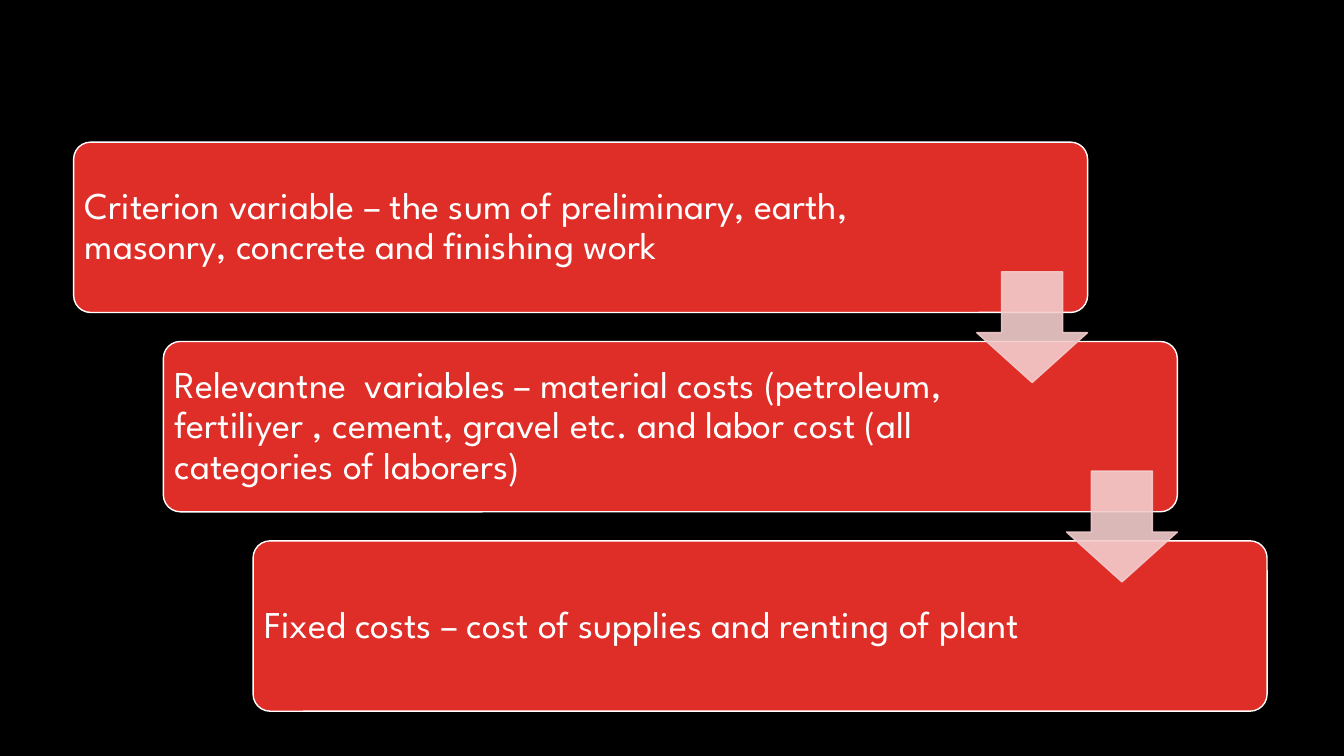
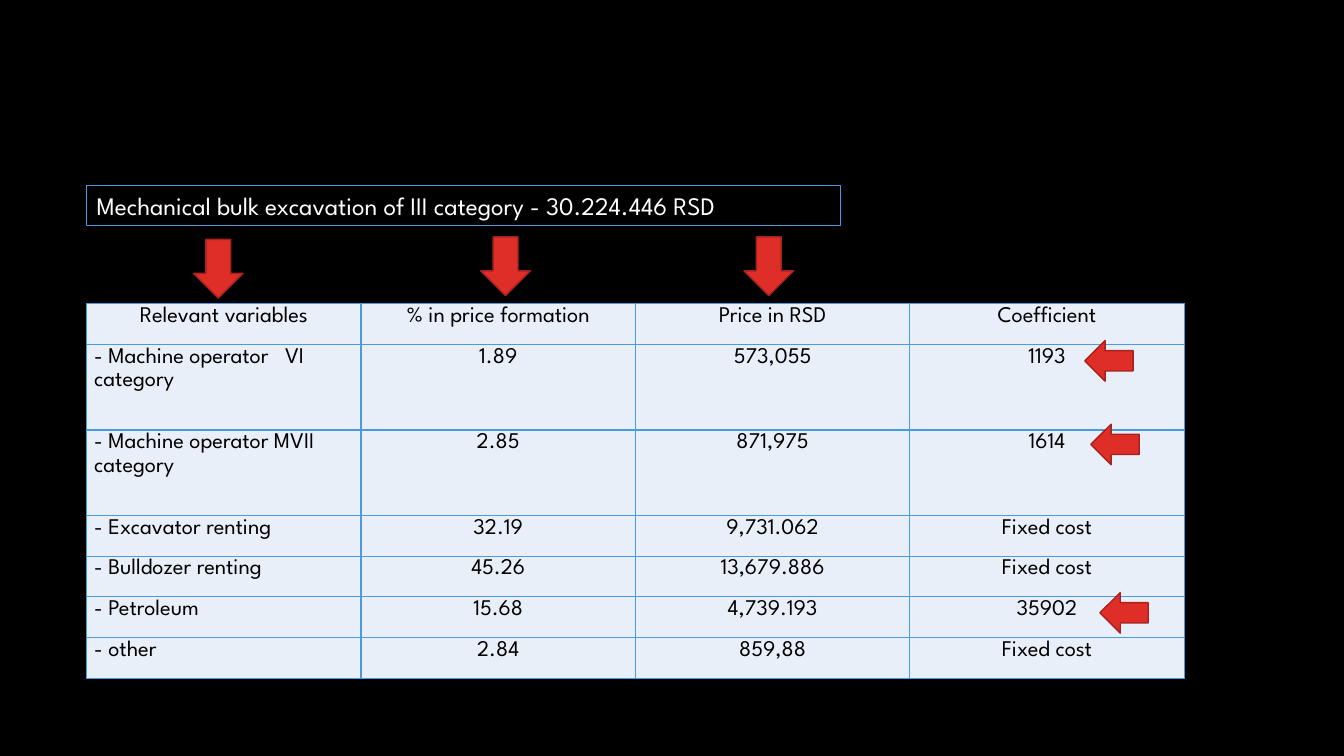
"""Build two slides on cost variables for construction price estimation."""
from lxml import etree
from pptx import Presentation
from pptx import util as u
from pptx.dml.color import RGBColor
from pptx.enum import shapes, text
from pptx.oxml.ns import qn

BLACK = RGBColor(0x00, 0x00, 0x00)
WHITE = RGBColor(0xFF, 0xFF, 0xFF)
RED = RGBColor(0xDF, 0x2E, 0x28)
DARK_RED = RGBColor(0xA5, 0x22, 0x1E)
PINK = RGBColor(0xF3, 0xCD, 0xCD)
BLUE = RGBColor(0x4A, 0x9B, 0xDC)
PALE_BLUE = RGBColor(0xE9, 0xEF, 0xF9)
FONT = "League Spartan"

CARD_LEFT, CARD_TOP = 52.6, 101.5
CARD_WIDTH, CARD_HEIGHT = 724.3, 121.7
CARD_STEP_X, CARD_STEP_Y = 64.1, 142.4
CARD_INSET = 4.4
STEP_ARROW_SIZE, STEP_ARROW_DROP = 79.2, 92.6
CARDS = [
    ("Criterion variable – the sum of preliminary, earth, masonry, "
     "concrete and finishing work", 128.7),
    ("Relevantne  variables – material costs (petroleum, fertiliyer , cement, "
     "gravel etc. and labor cost (all categories of laborers)", 147.7),
    ("Fixed costs – cost of supplies and renting of plant", 147.7),
]

TABLE_LEFT, TABLE_TOP = 61.9, 216.9
COLUMN_WIDTH = 196
ROW_HEIGHTS = [29.1, 61.1, 61.1, 29.1, 29.1, 29.1, 29.1]
COST_ROWS = [
    ("Relevant variables", "% in price formation", "Price in RSD", "Coefficient"),
    ("- Machine operator   VI category", "1.89", "573,055", "1193"),
    ("- Machine operator MVII category", "2.85", "871,975", "1614"),
    ("- Excavator renting", "32.19", "9,731.062", "Fixed cost"),
    ("- Bulldozer renting", "45.26", "13,679.886", "Fixed cost"),
    ("- Petroleum", "15.68", "4,739.193", "35902"),
    ("- other", "2.84", "859,88", "Fixed cost"),
]
COLUMN_ARROWS = [(138.2, 171), (343.4, 169.2), (531.4, 169.2)]
COEFFICIENT_ARROWS = [(777.6, 240.5), (781.9, 300.2), (788.4, 420.5)]


def add_slide(presentation):
    """Add a blank slide with a black background."""
    slide = presentation.slides.add_slide(presentation.slide_layouts[6])
    slide.background.fill.solid()
    slide.background.fill.fore_color.rgb = BLACK
    return slide


def add_shape(slide, kind, left, top, width, height, fill, line, line_width=1):
    """Add a preset shape without shadow; a fill of None leaves it hollow."""
    shape = slide.shapes.add_shape(
        kind, u.Pt(left), u.Pt(top), u.Pt(width), u.Pt(height))
    shape.shadow.inherit = False
    if fill is None:
        shape.fill.background()
    else:
        shape.fill.solid()
        shape.fill.fore_color.rgb = fill
    shape.line.color.rgb = line
    shape.line.width = u.Pt(line_width)
    return shape


def write_text(frame, content, size, color, spacing=1.0,
               alignment=text.PP_ALIGN.LEFT):
    """Write one formatted run into the first paragraph of a text frame."""
    frame.word_wrap = True
    paragraph = frame.paragraphs[0]
    paragraph.alignment = alignment
    paragraph.line_spacing = spacing
    run = paragraph.add_run()
    run.text = content
    run.font.name = FONT
    run.font.size = u.Pt(size)
    run.font.color.rgb = color


def set_opacity(shape, percent):
    """Make the fill and line colours of a shape partly transparent."""
    for color in shape._element.spPr.iter(qn("a:srgbClr")):
        etree.SubElement(color, qn("a:alpha"), val=str(percent * 1000))


def add_card(slide, index, content, right_inset):
    """Add one rounded card of the staircase."""
    card = add_shape(slide, shapes.MSO_SHAPE.ROUNDED_RECTANGLE,
                     CARD_LEFT + index * CARD_STEP_X,
                     CARD_TOP + index * CARD_STEP_Y,
                     CARD_WIDTH, CARD_HEIGHT, RED, WHITE)
    card.adjustments[0] = 0.1
    frame = card.text_frame
    frame.margin_left = u.Pt(CARD_INSET)
    frame.margin_right = u.Pt(right_inset)
    frame.vertical_anchor = text.MSO_ANCHOR.MIDDLE
    write_text(frame, content, 27, WHITE, 0.9)


def add_step_arrow(slide, index):
    """Add the pale arrow leading from one card to the next."""
    card_right = CARD_LEFT + index * CARD_STEP_X + CARD_WIDTH
    arrow = add_shape(slide, shapes.MSO_SHAPE.DOWN_ARROW,
                      card_right - STEP_ARROW_SIZE,
                      CARD_TOP + index * CARD_STEP_Y + STEP_ARROW_DROP,
                      STEP_ARROW_SIZE, STEP_ARROW_SIZE, PINK, PINK)
    arrow.adjustments[0] = 0.55
    arrow.adjustments[1] = 0.45
    set_opacity(arrow, 90)


def add_red_arrow(slide, left, top, width, height, rotation=0):
    """Add a red arrow that points down unless rotated."""
    arrow = add_shape(slide, shapes.MSO_SHAPE.DOWN_ARROW,
                      left, top, width, height, RED, DARK_RED)
    arrow.rotation = rotation


def set_borders(cell, color, width):
    """Draw all four borders of a table cell."""
    properties = cell._tc.get_or_add_tcPr()
    for side in ("a:lnL", "a:lnR", "a:lnT", "a:lnB"):
        border = etree.SubElement(properties, qn(side), w=str(u.Pt(width)))
        fill = etree.SubElement(border, qn("a:solidFill"))
        etree.SubElement(fill, qn("a:srgbClr"), val=str(color))


def format_cell(cell, content, alignment):
    """Fill, frame and write one table cell."""
    set_borders(cell, BLUE, 1)
    cell.fill.solid()
    cell.fill.fore_color.rgb = PALE_BLUE
    cell.margin_left = cell.margin_right = u.Pt(5.4)
    cell.margin_top = cell.margin_bottom = 0
    write_text(cell.text_frame, content, 16, BLACK, 1.15, alignment)


def add_cost_table(slide):
    """Add the table of variables, shares, prices and coefficients."""
    column_count = len(COST_ROWS[0])
    table = slide.shapes.add_table(
        len(COST_ROWS), column_count, u.Pt(TABLE_LEFT), u.Pt(TABLE_TOP),
        u.Pt(COLUMN_WIDTH * column_count), u.Pt(sum(ROW_HEIGHTS))).table
    table.first_row = table.horz_banding = False
    for column in table.columns:
        column.width = u.Pt(COLUMN_WIDTH)
    for row_index, values in enumerate(COST_ROWS):
        table.rows[row_index].height = u.Pt(ROW_HEIGHTS[row_index])
        for column_index, content in enumerate(values):
            is_label = row_index > 0 and column_index == 0
            alignment = text.PP_ALIGN.LEFT if is_label else text.PP_ALIGN.CENTER
            format_cell(table.cell(row_index, column_index), content, alignment)


def build_variables_slide(presentation):
    """Build the staircase of variable kinds."""
    slide = add_slide(presentation)
    for index, (content, right_inset) in enumerate(CARDS):
        add_card(slide, index, content, right_inset)
    for index in range(len(CARDS) - 1):
        add_step_arrow(slide, index)


def build_excavation_slide(presentation):
    """Build the cost breakdown of the excavation work."""
    slide = add_slide(presentation)
    add_cost_table(slide)
    heading = add_shape(slide, shapes.MSO_SHAPE.RECTANGLE,
                        TABLE_LEFT, 132.2, 538.6, 29.1, None, BLUE, 0.75)
    heading.text_frame.vertical_anchor = text.MSO_ANCHOR.MIDDLE
    write_text(heading.text_frame,
               "Mechanical bulk excavation of III category - 30.224.446 RSD",
               18, WHITE)
    for left, top in COLUMN_ARROWS:
        add_red_arrow(slide, left, top, 35.5, 42)
    for left, top in COEFFICIENT_ARROWS:
        add_red_arrow(slide, left, top, 29, 34.5, 90)


def main():
    """Build and save the presentation."""
    presentation = Presentation()
    presentation.slide_width = u.Pt(960)
    presentation.slide_height = u.Pt(540)
    build_variables_slide(presentation)
    build_excavation_slide(presentation)
    presentation.save("out.pptx")


if __name__ == "__main__":
    main()
